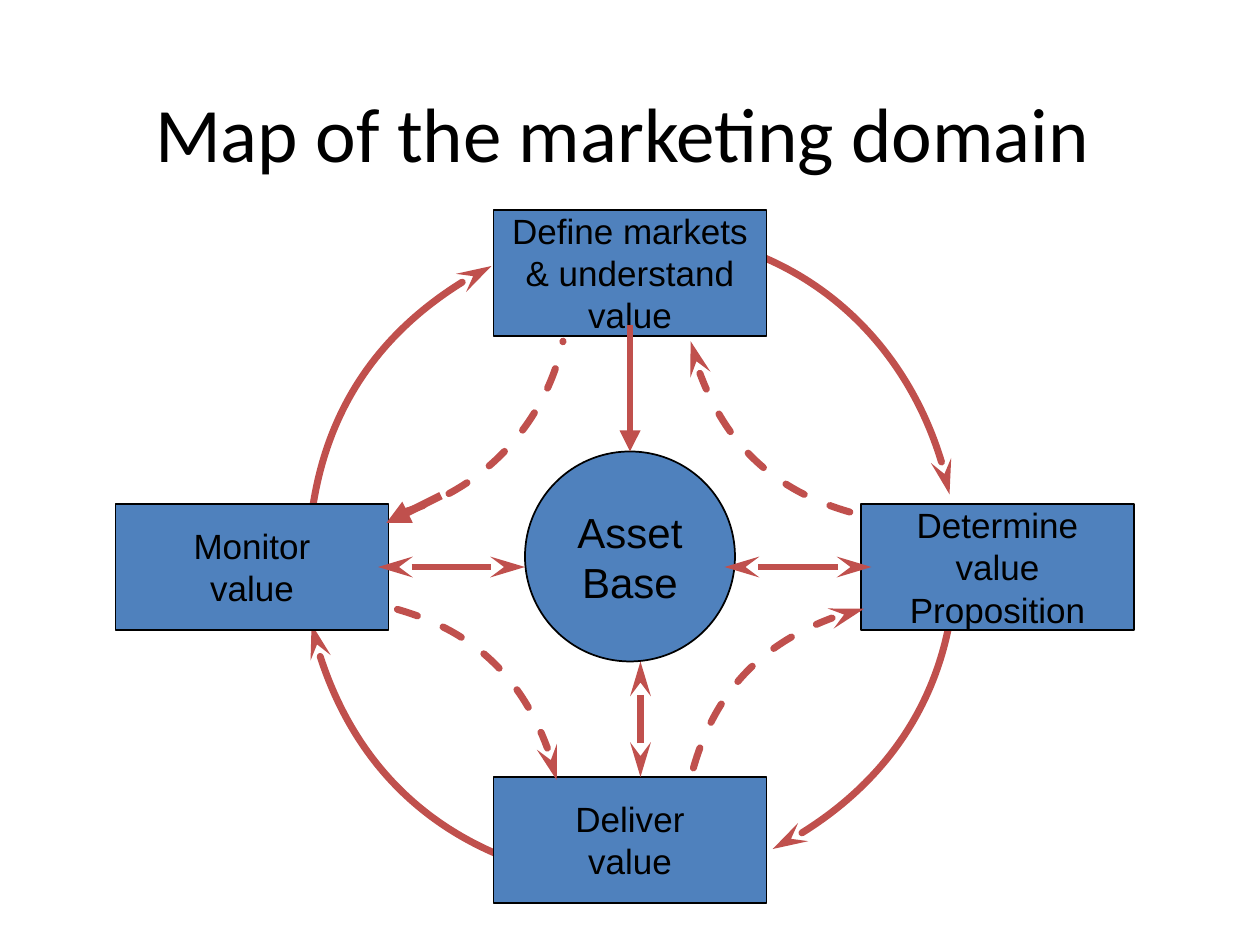
"""Build the slide that maps the marketing domain as a cycle round an asset base."""
import copy
import math
import pptx
import pptx.util
import pptx.dml.color
import pptx.enum.dml
import pptx.enum.shapes
import pptx.enum.text
import pptx.oxml.ns
import lxml.etree

Pt = pptx.util.Pt
Kind = pptx.enum.shapes.MSO_SHAPE
hues = {"box": "4F81BD", "arrow": "C0504D", "ink": "000000"}
rgb = {k: pptx.dml.color.RGBColor.from_string(v) for k, v in hues.items()}
qn = pptx.oxml.ns.qn

deck = pptx.Presentation()
deck.slide_width = pptx.util.Inches(10)
deck.slide_height = pptx.util.Inches(7.5)
cell = deck.slide_width / 120
slide = deck.slides.add_slide(deck.slide_layouts[5])


def grid(*spots):
    """Turn grid steps into slide lengths."""
    return [round(s * cell) for s in spots]


def stroke(shape, head, tail, width=4, dash=False):
    """Draw a line in the arrow colour with the given ends."""
    line = shape.line
    line.color.rgb = rgb["arrow"]
    line.width = Pt(width)
    if dash:
        line.dash_style = pptx.enum.dml.MSO_LINE.DASH
    ln = shape._element.spPr.find(qn("a:ln"))
    for tag, end in (("a:headEnd", head), ("a:tailEnd", tail)):
        if end:
            tip = lxml.etree.SubElement(ln, qn(tag))
            tip.set("type", end)
            if end == "stealth":
                tip.set("len", "lg")
    return ln


title = slide.shapes.title
title.left, title.top, title.width, title.height = grid(8.3, 5, 102, 15)
title.text_frame.text = "Map of the marketing domain"
title.text_frame.vertical_anchor = pptx.enum.text.MSO_ANCHOR.MIDDLE
para = title.text_frame.paragraphs[0]
para.alignment = pptx.enum.text.PP_ALIGN.CENTER
para.font.size, para.font.name = Pt(44), "Calibri"
para.font.color.rgb = rgb["ink"]

nodes = [
    (Kind.OVAL, 50, 43, 20, 20, 24, "Asset\nBase"),
    (Kind.RECTANGLE, 47, 20, 26, 12, 20, "Define markets\n& understand\nvalue"),
    (Kind.RECTANGLE, 82, 48, 26, 12, 20, "Determine\nvalue\nProposition"),
    (Kind.RECTANGLE, 47, 74, 26, 12, 20, "Deliver\nvalue"),
    (Kind.RECTANGLE, 11, 48, 26, 12, 20, "Monitor\nvalue"),
]
for kind, x, y, w, h, size, text in nodes:
    node = slide.shapes.add_shape(kind, *grid(x, y, w, h))
    node.shadow.inherit = False
    node.fill.solid()
    node.fill.fore_color.rgb = rgb["box"]
    node.line.color.rgb = rgb["ink"]
    node.line.width = Pt(1)
    frame = node.text_frame
    frame.text = text
    frame.word_wrap = False
    frame.vertical_anchor = pptx.enum.text.MSO_ANCHOR.MIDDLE
    for para in frame.paragraphs:
        para.alignment = pptx.enum.text.PP_ALIGN.CENTER
        para.font.size, para.font.name = Pt(size), "Arial"
        para.font.color.rgb = rgb["ink"]

arcs = [
    (60.4, 53.2, 31, 187, 244, "stealth", False),
    (60, 53, 31, 106, 168, "stealth", False),
    (60, 53, 31, 1, 64, "stealth", False),
    (60, 53, 31, 270, 349, "stealth", False),
    (31.9, 78.8, 21.6, 286, 348, "stealth", True),
    (86.8, 79.1, 21.6, 196, 258, "stealth", True),
    (86.9, 28, 21.6, 106, 168, "stealth", True),
    (32.5, 28, 21.6, 106 - 32, 12, None, True),
]
for x, y, r, start, end, tail, dash in arcs:
    a, b = math.radians(start), math.radians(end)
    pull = 4 / 3 * math.tan((b - a) / 4)
    dots = [grid(x + r * (math.cos(t) - k * math.sin(t)),
                 y + r * (math.sin(t) + k * math.cos(t)))
            for t, k in ((a, 0), (a, pull), (b, -pull), (b, 0))]
    pen = slide.shapes.build_freeform(*dots[0])
    pen.add_line_segments(dots[1:] + [grid(x, y)], close=True)
    arc = pen.convert_to_shape()
    arc.shadow.inherit = False
    arc.fill.background()
    stroke(arc, None, tail, dash=dash).set("cap", "rnd")
    wedge = next(arc._element.iter(qn("a:path")))
    curve = lxml.etree.Element(qn("a:cubicBezTo"))
    for step in wedge.findall(qn("a:lnTo"))[:3]:
        curve.append(step[0])
        wedge.remove(step)
    wedge.insert(1, curve)
    rim = copy.deepcopy(wedge)
    for part in rim[2:]:
        rim.remove(part)
    rim.set("fill", "none")
    wedge.set("stroke", "0")
    wedge.addprevious(rim)
    if not dash:
        slide.shapes._spTree.insert(2, arc._element)

links = [
    (36, 54, 50, 54, "stealth", "stealth", 4),
    (60, 43, 60, 31, "triangle", None, 4),
    (69, 54, 83, 54, "stealth", "stealth", 4),
    (61, 74, 61, 63, "stealth", "stealth", 4),
    (42, 47.2, 36.8, 49.8, None, "triangle", 4.5),
]
for *ends, head, tail, width in links:
    link = slide.shapes.add_connector(
        pptx.enum.shapes.MSO_CONNECTOR.STRAIGHT, *grid(*ends))
    stroke(link, head, tail, width)
    lxml.etree.SubElement(link._element.spPr, qn("a:effectLst"))

deck.save("out.pptx")
